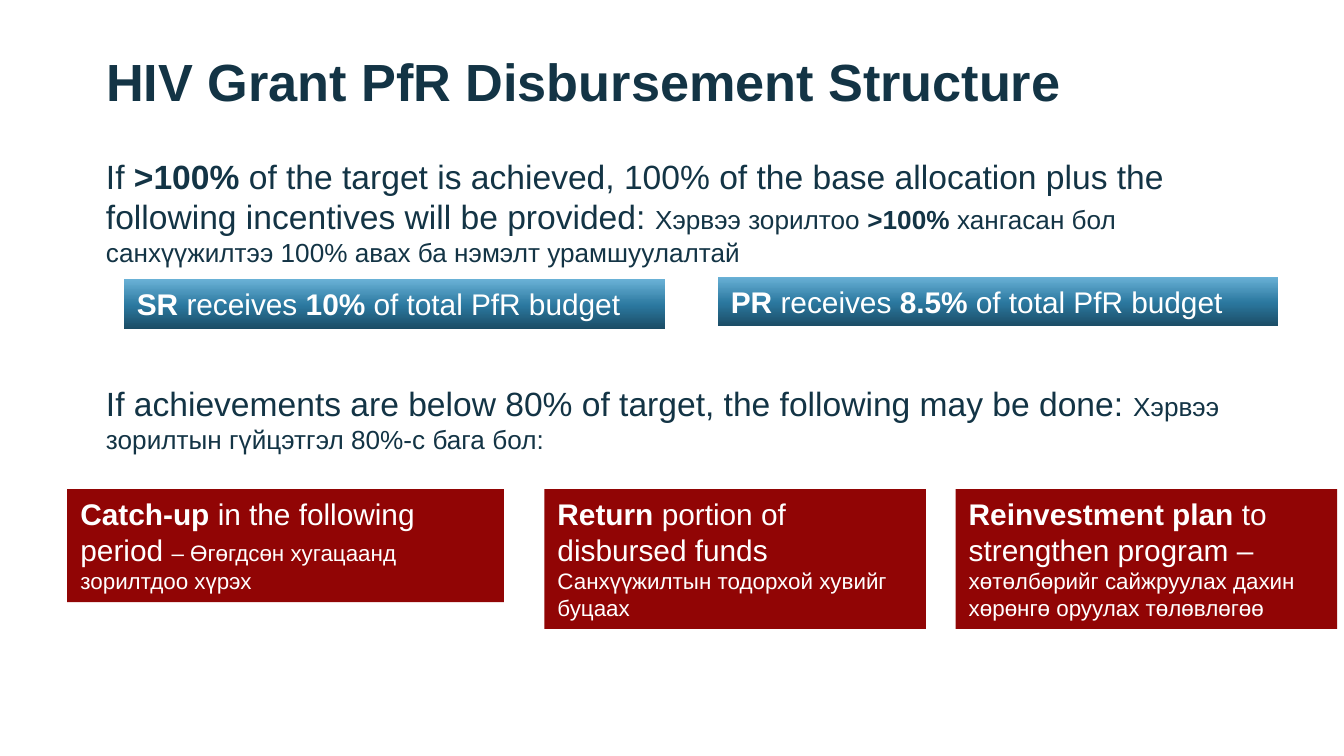
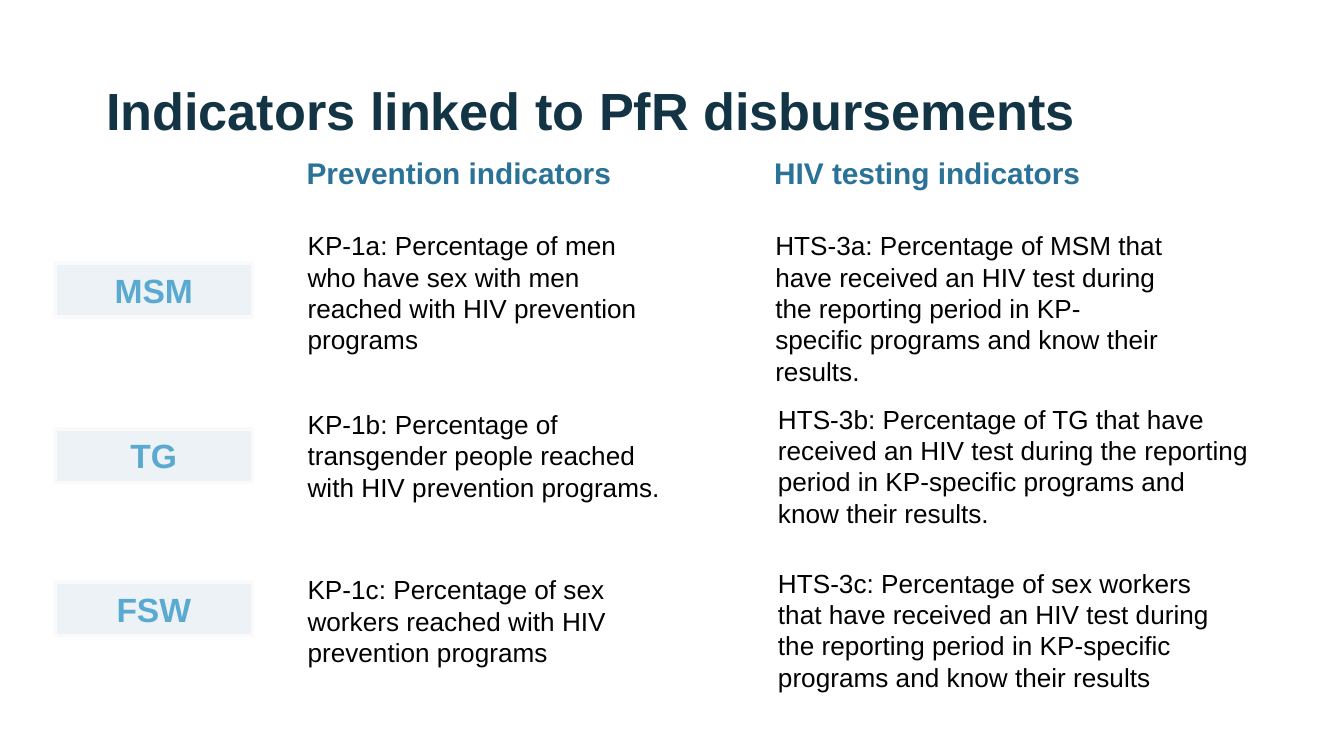
"""Build two slides on the payment rules and indicators of the HIV grant."""
from copy import deepcopy

from pptx import Presentation
from pptx.dml.color import RGBColor
from pptx.enum.shapes import MSO_SHAPE
from pptx.enum.text import MSO_ANCHOR, MSO_AUTO_SIZE, PP_ALIGN
from pptx.util import Inches, Pt

FONT = "Arial"
HEX = {
    "navy": "133445", "white": "FFFFFF", "black": "000000", "red": "910505",
    "head": "2A7298", "sky": "5AA9D1", "pale": "ECF2F5", "edge": "FAFAFA",
    "deep": "1B4C65", "mid": "2B789F", "light": "69B1D6",
}
BLEND = [(0, "deep"), (0.48, "mid"), (1, "light")]
LEFT = 0.69


def color(name):
    return RGBColor.from_string(HEX[name])


def write(frame, paras, ink, align=PP_ALIGN.LEFT, fit=MSO_AUTO_SIZE.SHAPE_TO_FIT_TEXT):
    frame.word_wrap = True
    frame.auto_size = fit
    for i, runs in enumerate(paras):
        para = frame.add_paragraph() if i else frame.paragraphs[0]
        para.alignment = align
        for text, size, bold in runs:
            run = para.add_run()
            run.text = text
            run.font.name = FONT
            run.font.size = Pt(size)
            run.font.bold = bold
            run.font.color.rgb = color(ink)


def add_page(deck, title, height):
    page = deck.slides.add_slide(deck.slide_layouts[5])
    head = page.shapes.title
    head.left, head.top = Inches(LEFT), Inches(0.3)
    head.width, head.height = Inches(8.62), Inches(height)
    head.text_frame.vertical_anchor = MSO_ANCHOR.MIDDLE
    write(head.text_frame, [[(title, 28, True)]], "navy", fit=MSO_AUTO_SIZE.NONE)
    head.text_frame.paragraphs[0].line_spacing = 0.9
    return page


def add_text(page, area, paras, ink, align=PP_ALIGN.LEFT):
    box = page.shapes.add_textbox(*map(Inches, area))
    write(box.text_frame, paras, ink, align)


def add_box(page, area, paras, ink="white", align=PP_ALIGN.LEFT):
    box = page.shapes.add_shape(MSO_SHAPE.RECTANGLE, *map(Inches, area))
    box.shadow.inherit = False
    box.line.fill.background()
    box.text_frame.vertical_anchor = MSO_ANCHOR.TOP
    write(box.text_frame, paras, ink, align)
    return box


def paint(box, fill):
    box.fill.solid()
    box.fill.fore_color.rgb = color(fill)


def blend(box):
    box.fill.gradient()
    box.fill.gradient_angle = 90
    stops = box.element.spPr.gradFill.gsLst
    stops.append(deepcopy(stops[0]))
    for stop, (place, tone) in zip(box.fill.gradient_stops, BLEND):
        stop.position = place
        stop.color.rgb = color(tone)


def add_tag(page, top, text):
    tag = add_box(page, (0.41, top, 1.47, 0.4), [[(text, 18, True)]],
                  "sky", PP_ALIGN.CENTER)
    paint(tag, "pale")
    tag.line.color.rgb = color("edge")
    tag.line.width = Pt(2)


def add_rules(deck):
    page = add_page(deck, "HIV Grant PfR Disbursement Structure", 0.66)
    add_text(page, (LEFT, 1.11, 8.75, 0.94), [[
        ("If ", 18, False), (">100% ", 18, True),
        ("of the target is achieved, 100% of the base allocation plus the "
         "following incentives will be provided: ", 18, False),
        ("Хэрвээ зорилтоо ", 14, False), (">100% ", 14, True),
        ("хангасан бол санхүүжилтээ 100% авах ба нэмэлт урамшуулалтай", 14, False),
    ]], "navy")
    bonus = [((0.92, 2.08, 4.03, 0.37), "SR ", "10%"),
             ((5.34, 2.06, 4.17, 0.37), "PR ", "8.5%")]
    for area, who, share in bonus:
        blend(add_box(page, area, [[
            (who, 16, True), ("receives ", 16, False), (share, 16, True),
            (" of total PfR budget", 16, False)]]))
    add_text(page, (LEFT, 2.8, 8.75, 0.64), [[
        ("If achievements are below 80% of target, the following may be done: ",
         18, False),
        ("Хэрвээ зорилтын гүйцэтгэл 80%-с бага бол:", 14, False),
    ]], "navy")
    steps = [
        (0.5, 3.25, 0.84, [[
            ("Catch-up", 16, True), (" in the following period ", 16, False),
            ("– Өгөгдсөн хугацаанд зорилтдоо хүрэх", 12, False)]]),
        (4.05, 2.84, 1.04, [
            [("Return ", 16, True), ("portion of disbursed funds", 16, False)],
            [("Санхүүжилтын тодорхой хувийг буцаах", 12, False)]]),
        (7.11, 2.84, 1.04, [[
            ("Reinvestment plan ", 16, True),
            ("to strengthen program – ", 16, False),
            ("хөтөлбөрийг сайжруулах дахин хөрөнгө оруулах төлөвлөгөө",
             12, False)]]),
    ]
    for left, width, height, paras in steps:
        paint(add_box(page, (left, 3.64, width, height), paras), "red")


def add_goals(deck):
    page = add_page(deck, "Indicators linked to PfR disbursements", 1.09)
    heads = [(1.63, 3.57, "Prevention indicators"),
             (5.46, 2.88, "HIV testing indicators")]
    for left, width, text in heads:
        add_text(page, (left, 1.1, width, 0.37), [[(text, 16, True)]],
                 "head", PP_ALIGN.CENTER)
    test = (" have received an HIV test during the reporting period in "
            "KP-specific programs and know their results")
    rows = [
        ("MSM", 1.96,
         (2.19, 1.66, 2.88, 1.04), "KP-1a: Percentage of men who have sex with "
         "men reached with HIV prevention programs",
         (5.67, 1.66, 3.12, 1.04), f"HTS-3a: Percentage of MSM that{test}."),
        ("TG", 3.19,
         (2.19, 2.99, 3.01, 0.81), "KP-1b: Percentage of transgender people "
         "reached with HIV prevention programs.",
         (5.69, 2.95, 3.73, 1.04), f"HTS-3b: Percentage of TG that{test}."),
        ("FSW", 4.33,
         (2.19, 4.22, 2.73, 0.81), "KP-1c: Percentage of sex workers reached "
         "with HIV prevention programs",
         (5.69, 4.17, 3.45, 1.04), f"HTS-3c: Percentage of sex workers that{test}"),
    ]
    for group, top, *cells in rows:
        add_tag(page, top, group)
        for area, text in zip(cells[::2], cells[1::2]):
            add_text(page, area, [[(text, 14, False)]], "black")


def main():
    deck = Presentation()
    deck.slide_width = Inches(10)
    deck.slide_height = Inches(10 * 9 / 16)
    add_rules(deck)
    add_goals(deck)
    deck.save("out.pptx")


if __name__ == "__main__":
    main()
